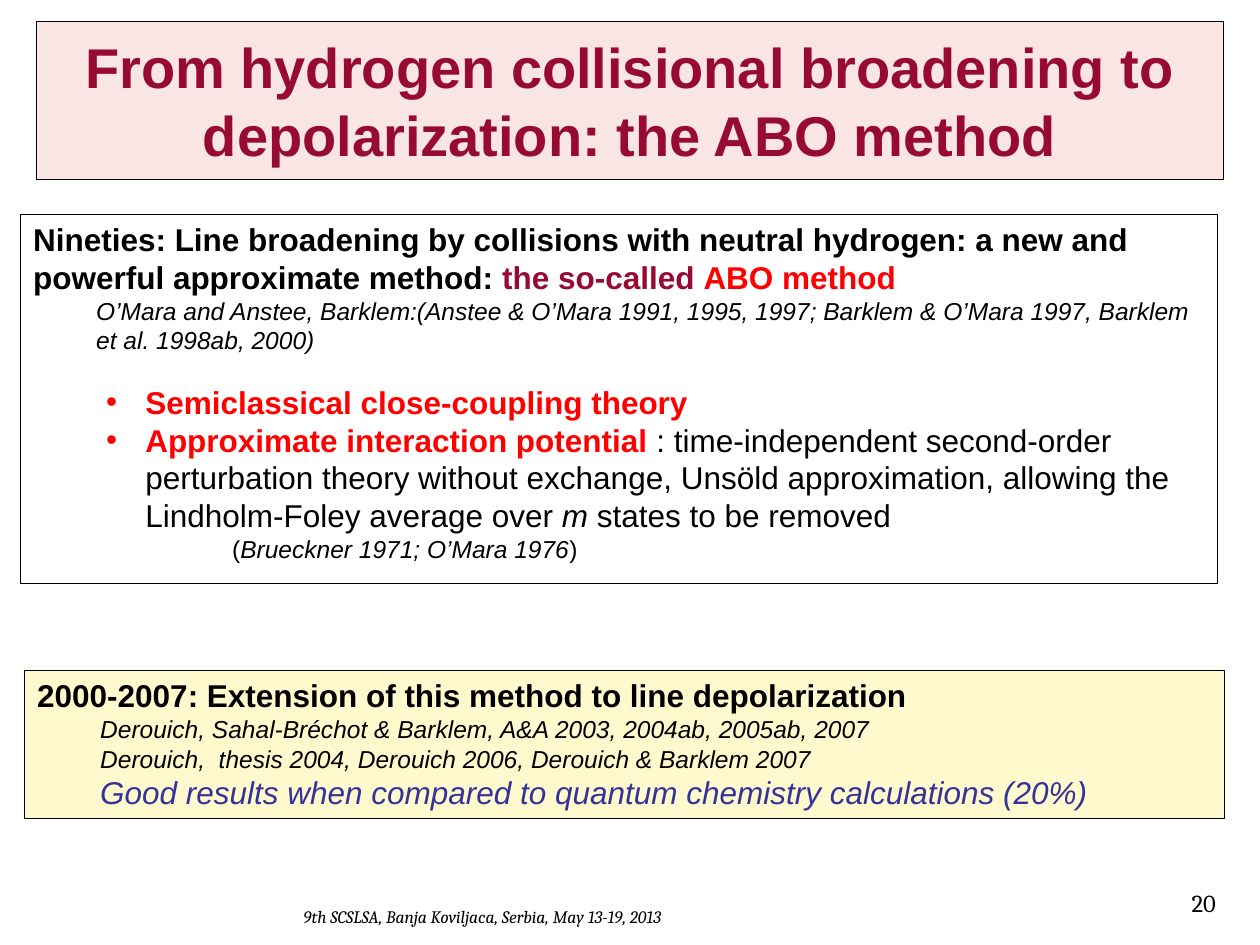
from lxml import etree
from pptx import Presentation
from pptx import util as u
from pptx.dml.color import RGBColor
from pptx.enum import shapes, text
from pptx.oxml.ns import qn

BLACK, WINE, RED, BLUE = "000000", "970A32", "FF0000", "333399"
WHITE, PINK, YELLOW = "FFFFFF", "F9E6E3", "FFF9CD"
CENTER, RIGHT = text.PP_ALIGN.CENTER, text.PP_ALIGN.RIGHT
REFERENCE_INDENT = 1.27
BULLET_INDENT = 2.26
BULLET_HANG = 0.79
CITATION_INDENT = 4.01


def color(value):
    return RGBColor.from_string(value)


def add_box(s, left, top, width, height, fill, line=None):
    sp = s.shapes.add_shape(shapes.MSO_SHAPE.RECTANGLE,
                            u.Cm(left), u.Cm(top), u.Cm(width), u.Cm(height))
    sp.shadow.inherit = False
    sp.fill.solid()
    sp.fill.fore_color.rgb = color(fill)
    if line:
        sp.line.color.rgb = color(line)
        sp.line.width = u.Pt(0.5)
    else:
        sp.line.fill.background()
    return prepare(sp.text_frame)


def add_label(s, left, top, width, height):
    sp = s.shapes.add_textbox(u.Cm(left), u.Cm(top), u.Cm(width), u.Cm(height))
    return prepare(sp.text_frame)


def prepare(tf):
    tf.word_wrap = True
    tf.vertical_anchor = text.MSO_ANCHOR.TOP
    return tf


def add_paragraph(tf, *runs, align=text.PP_ALIGN.LEFT, indent=0, bullet=False, before=0):
    p = tf.paragraphs[0]
    if p.runs:
        p = tf.add_paragraph()
    p.alignment = align
    pPr = p._p.get_or_add_pPr()
    pPr.set("marL", str(u.Cm(indent)))
    pPr.set("indent", str(-u.Cm(BULLET_HANG) if bullet else 0))
    if bullet:
        etree.SubElement(pPr, qn("a:buFont")).set("typeface", "Arial")
        etree.SubElement(pPr, qn("a:buChar")).set("char", "•")
    if before:
        p.space_before = u.Pt(before)
    for content, style in runs:
        add_run(p, content, **style)


def add_run(p, content, size=18, fill=BLACK, bold=False, italic=False, font="Arial"):
    r = p.add_run()
    r.text = content
    r.font.name = font
    r.font.size = u.Pt(size)
    r.font.bold = bold
    r.font.italic = italic
    r.font.color.rgb = color(fill)


def add_reference(tf, content):
    add_paragraph(tf, (content, dict(size=14, italic=True)), indent=REFERENCE_INDENT)


def add_footer(s):
    tf = add_box(s, 5.49, 18.14, 8.46, 0.71, WHITE)
    add_paragraph(tf, ("9th SCSLSA, Banja Koviljaca, Serbia, May 13-19, 2013",
                       dict(size=10, italic=True, font="Cambria")), align=CENTER)
    tf = add_label(s, 21.79, 17.78, 2.97, 0.84)
    add_paragraph(tf, ("20", dict(size=14, font="Cambria")), align=RIGHT)


def add_title(s):
    tf = add_box(s, 0.74, 0.43, 23.93, 3.18, PINK, BLACK)
    tf.vertical_anchor = text.MSO_ANCHOR.MIDDLE
    add_paragraph(tf, ("From hydrogen collisional broadening to depolarization: the ABO method",
                       dict(size=32, fill=WINE, bold=True)), align=CENTER)


def add_method(s):
    tf = add_box(s, 0.42, 4.32, 24.13, 7.44, WHITE, BLACK)
    strong = dict(fill=RED, bold=True)
    add_paragraph(
        tf,
        ("Nineties: Line broadening by collisions with neutral hydrogen: a new and "
         "powerful approximate method: ", dict(bold=True)),
        ("the so-called ", dict(fill=WINE, bold=True)),
        ("ABO method", strong))
    add_reference(tf, "O’Mara and Anstee, Barklem:(Anstee & O’Mara 1991, 1995, 1997; "
                      "Barklem & O’Mara 1997, Barklem et al. 1998ab, 2000)")
    add_paragraph(tf, ("Semiclassical close-coupling theory", strong),
                  indent=BULLET_INDENT, bullet=True, before=16)
    add_paragraph(
        tf,
        ("Approximate interaction potential ", strong),
        (": time-independent second-order perturbation theory without exchange, "
         "Unsöld approximation, allowing the Lindholm-Foley average over ", {}),
        ("m ", dict(italic=True)),
        ("states to be removed", {}),
        indent=BULLET_INDENT, bullet=True)
    add_paragraph(
        tf,
        ("(", dict(size=14)),
        ("Brueckner 1971; O’Mara 1976", dict(size=14, italic=True)),
        (")", dict(size=14)),
        indent=CITATION_INDENT)


def add_extension(s):
    tf = add_box(s, 0.5, 13.51, 24.18, 3, YELLOW, BLACK)
    add_paragraph(tf, ("2000-2007: Extension of this method to line depolarization",
                       dict(bold=True)))
    add_reference(tf, "Derouich, Sahal-Bréchot & Barklem, A&A 2003, 2004ab, 2005ab, 2007")
    add_reference(tf, "Derouich,  thesis 2004, Derouich 2006, Derouich & Barklem 2007")
    add_paragraph(tf, ("Good results when compared to quantum chemistry calculations (20%)",
                       dict(fill=BLUE, italic=True)), indent=REFERENCE_INDENT)


def main():
    prs = Presentation()
    prs.slide_width, prs.slide_height = u.Cm(25.4), u.Cm(19.05)
    s = prs.slides.add_slide(prs.slide_layouts[6])
    add_footer(s)
    add_title(s)
    add_method(s)
    add_extension(s)
    prs.save("out.pptx")


if __name__ == "__main__":
    main()
